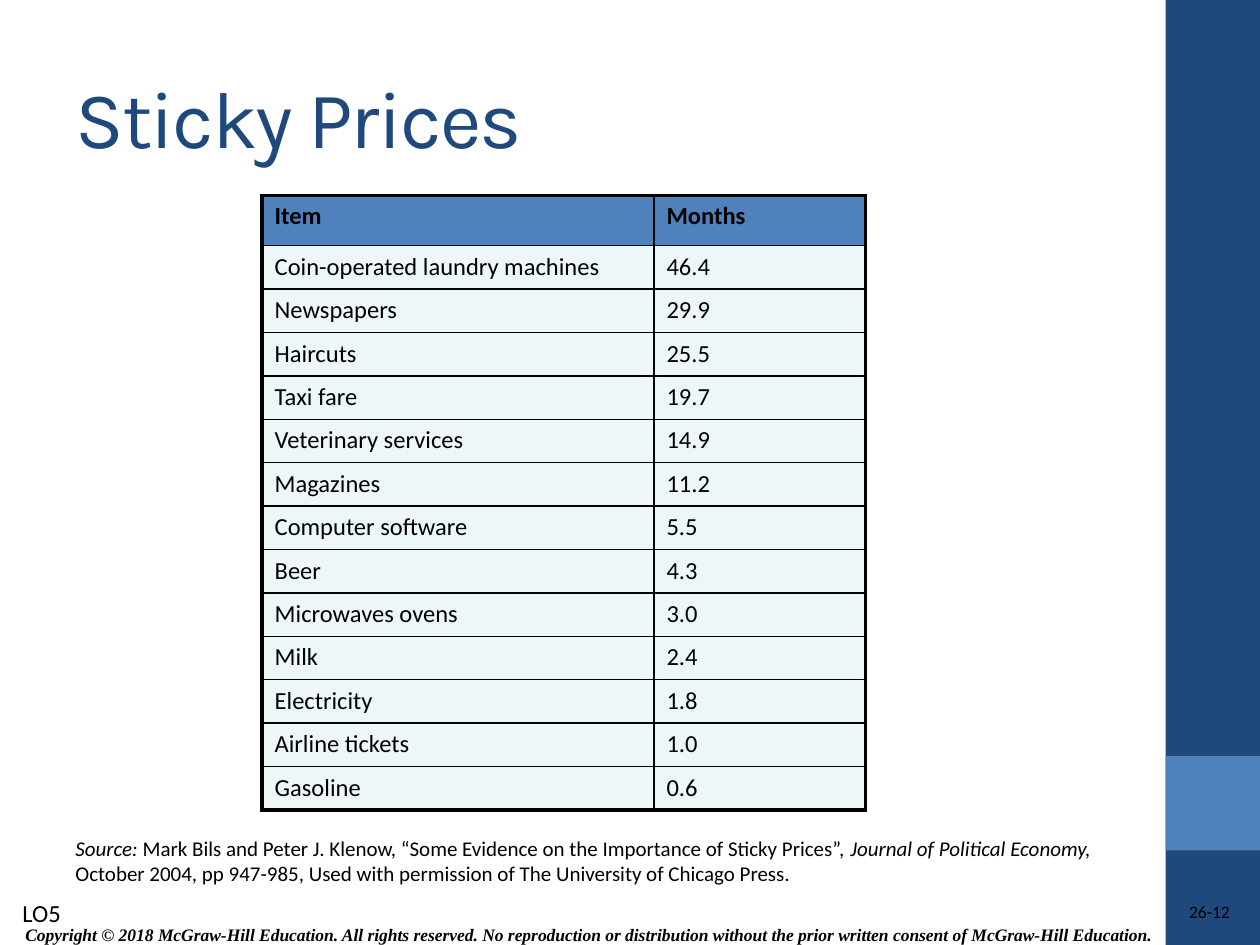
import pptx
import pptx.dml.color
import pptx.enum.shapes
import pptx.enum.text
import pptx.oxml.xmlchemy
import pptx.util
from lxml import etree
from pptx.oxml.ns import qn

Inches = pptx.util.Inches
Pt = pptx.util.Pt
RGBColor = pptx.dml.color.RGBColor
Align = pptx.enum.text.PP_ALIGN
Anchor = pptx.enum.text.MSO_ANCHOR

NAVY = RGBColor(0x1F, 0x49, 0x7D)
BLUE = RGBColor(0x4F, 0x81, 0xBD)
PALE = RGBColor(0xEE, 0xF7, 0xF8)
BLACK = RGBColor(0, 0, 0)


def add_span(para, text, size=14, font="Calibri", color=BLACK, bold=False, italic=False):
    span = para.add_run()
    span.text = text
    span.font.size = Pt(size)
    span.font.name = font
    span.font.color.rgb = color
    span.font.bold = bold
    span.font.italic = italic
    return span


def add_box(left, top, width, height, anchor=Anchor.TOP, align=Align.LEFT, wrap=True):
    box = page.shapes.add_textbox(Inches(left), Inches(top), Inches(width), Inches(height))
    box.text_frame.word_wrap = wrap
    box.text_frame.vertical_anchor = anchor
    box.text_frame.paragraphs[0].alignment = align
    return box.text_frame


deck = pptx.Presentation()
deck.slide_width = Inches(10)
deck.slide_height = Inches(7.5)
page = deck.slides.add_slide(deck.slide_layouts[6])

for top, height, color in [(0, 7.5, NAVY), (6, 0.75, BLUE)]:
    band = page.shapes.add_shape(
        pptx.enum.shapes.MSO_SHAPE.RECTANGLE,
        Inches(9.25), Inches(top), Inches(0.75), Inches(height))
    band.shadow.inherit = False
    band.fill.solid()
    band.fill.fore_color.rgb = color
    band.line.fill.background()

copyright_frame = add_box(0.06, 7.28, 9.22, 0.28, Anchor.MIDDLE, Align.CENTER)
add_span(copyright_frame.paragraphs[0],
         "Copyright © 2018 McGraw-Hill Education. All rights reserved. No reproduction or "
         "distribution without the prior written consent of McGraw-Hill Education.",
         size=10, font="Times New Roman", bold=True, italic=True)

number_frame = add_box(7.81, 7.15, 1.95, 0.2, align=Align.RIGHT)
number_frame.margin_left = number_frame.margin_right = 0
number_frame.margin_top = number_frame.margin_bottom = 0
number_frame.paragraphs[0].line_spacing = 1.02
add_span(number_frame.paragraphs[0], "26-12", size=10)

title_frame = add_box(0.5, 0.3, 8.33, 1.25, Anchor.MIDDLE)
title = add_span(title_frame.paragraphs[0], "Sticky Prices", size=46, font="Karla", color=NAVY)
title.font._element.set("spc", "-100")

rows = [
    ("Item", "Months"),
    ("Coin-operated laundry machines", "46.4"),
    ("Newspapers", "29.9"),
    ("Haircuts", "25.5"),
    ("Taxi fare", "19.7"),
    ("Veterinary services", "14.9"),
    ("Magazines", "11.2"),
    ("Computer software", "5.5"),
    ("Beer", "4.3"),
    ("Microwaves ovens", "3.0"),
    ("Milk", "2.4"),
    ("Electricity", "1.8"),
    ("Airline tickets", "1.0"),
    ("Gasoline", "0.6"),
]
header_height = 0.4
table_height = 4.88
last_row = len(rows) - 1
table = page.shapes.add_table(
    len(rows), 2, Inches(2.08), Inches(1.55), Inches(4.79), Inches(table_height)).table
table.first_row = False
table.horz_banding = False
table.columns[0].width = Inches(3.11)
table.columns[1].width = Inches(1.68)

for row_index, row in enumerate(rows):
    is_header = row_index == 0
    table.rows[row_index].height = Inches(
        header_height if is_header else (table_height - header_height) / last_row)
    for column_index, text in enumerate(row):
        cell = table.cell(row_index, column_index)
        add_span(cell.text_frame.paragraphs[0], text, bold=is_header)
        outer_edges = [
            ("a:lnL", column_index == 0),
            ("a:lnR", column_index == 1),
            ("a:lnT", is_header),
            ("a:lnB", row_index == last_row),
        ]
        properties = cell._tc.get_or_add_tcPr()
        for tag, is_outer in outer_edges:
            edge = etree.SubElement(properties, qn(tag), w=str(Pt(2.25 if is_outer else 1)))
            paint = etree.SubElement(edge, qn("a:solidFill"))
            etree.SubElement(paint, qn("a:srgbClr"), val=str(BLACK))
        cell.fill.solid()
        cell.fill.fore_color.rgb = BLUE if is_header else PALE

source_para = add_box(0.5, 6.58, 8.42, 0.5).paragraphs[0]
for text, italic in [
    ("Source: ", True),
    ("Mark Bils and Peter J. Klenow, “Some Evidence on the Importance of Sticky Prices”,", False),
    (" Journal of Political Economy, ", True),
    ("October 2004, pp 947-985, Used with permission of The University of Chicago Press.", False),
]:
    add_span(source_para, text, size=12, italic=italic)

objective_frame = add_box(0.08, 7.08, 0.53, 0.34, wrap=False)
add_span(objective_frame.paragraphs[0], "LO5")

deck.save("out.pptx")
